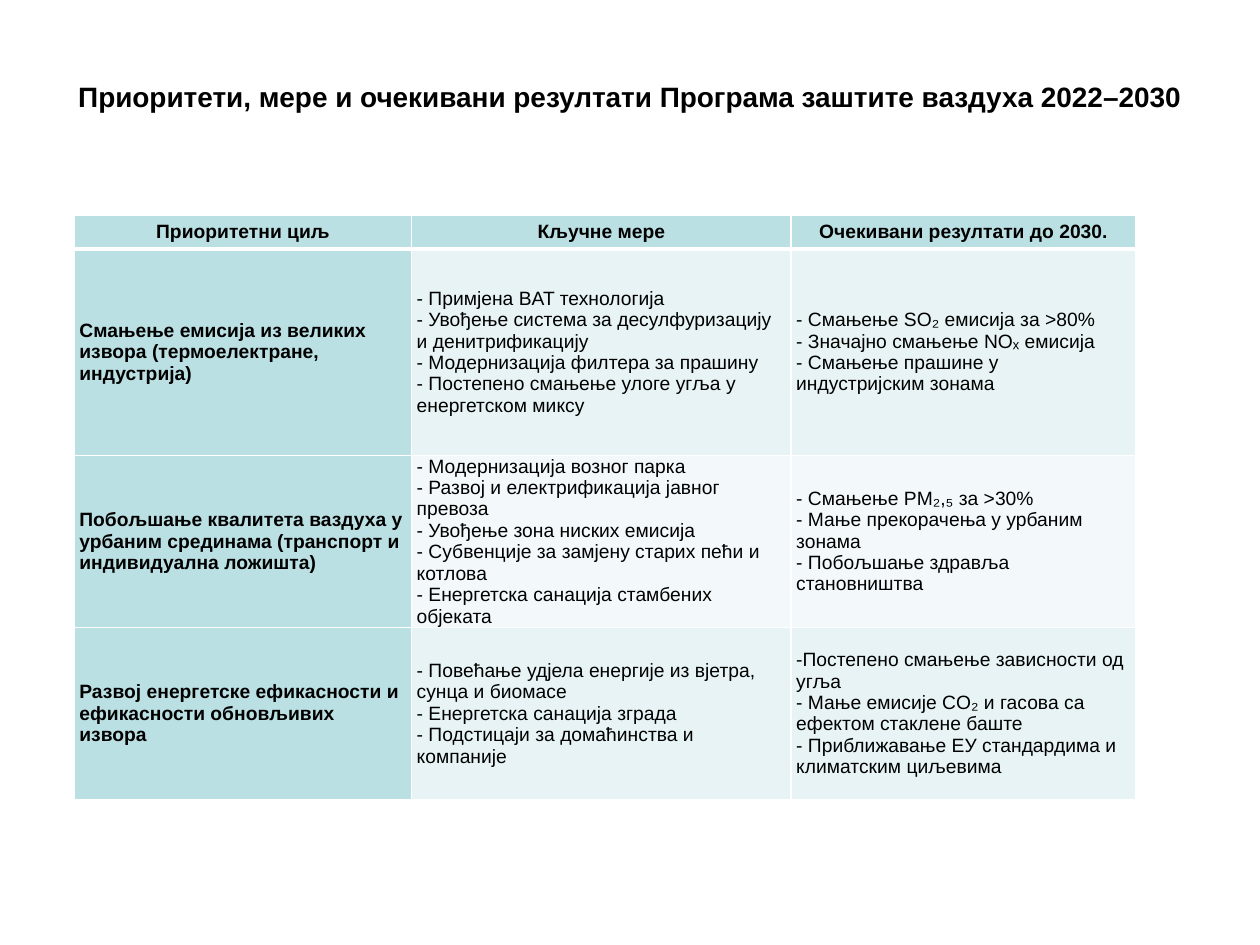
from lxml import etree
from pptx import Presentation
from pptx.dml.color import RGBColor
from pptx.enum import text
from pptx.oxml import ns
from pptx.util import Cm, Pt

BLACK = RGBColor(0x00, 0x00, 0x00)
WHITE = RGBColor(0xFF, 0xFF, 0xFF)
TEAL = RGBColor(0xBB, 0xE0, 0xE3)
BAND_DARK = RGBColor(0xE7, 0xF3, 0xF4)
BAND_LIGHT = RGBColor(0xF3, 0xF9, 0xFA)

TITLE = "Приоритети, мере и очекивани резултати Програма заштите ваздуха 2022–2030"
COLUMN_WIDTHS = [6.8, 7.65, 6.95]
ROW_HEIGHTS = [0.69, 4.16, 3.47, 3.47]
ROWS = [
    [["Приоритетни циљ"], ["Кључне мере"], ["Очекивани резултати до 2030."]],
    [
        ["Смањење емисија из великих извора (термоелектране, индустрија)"],
        [
            "- Примјена BAT технологија",
            "- Увођење система за десулфуризацију и денитрификацију",
            "- Модернизација филтера за прашину",
            "- Постепено смањење улоге угља у енергетском миксу",
        ],
        [
            "- Смањење SO₂ емисија за >80%",
            "- Значајно смањење NOₓ емисија",
            "- Смањење прашине у индустријским зонама",
        ],
    ],
    [
        ["Побољшање квалитета ваздуха у урбаним срединама (транспорт и индивидуална ложишта)"],
        [
            "- Модернизација возног парка",
            "- Развој и електрификација јавног превоза",
            "- Увођење зона ниских емисија",
            "- Субвенције за замјену старих пећи и котлова",
            "- Енергетска санација стамбених објеката",
        ],
        [
            "- Смањење PM₂,₅ за >30%",
            "- Мање прекорачења у урбаним зонама",
            "- Побољшање здравља становништва",
        ],
    ],
    [
        ["Развој енергетске ефикасности и ефикасности обновљивих извора"],
        [
            "- Повећање удjела енергије из вjетра, сунца и биомасе",
            "- Енергетска санација зграда",
            "- Подстицаји за домаћинства и компаније",
        ],
        [
            "-Постепено смањење зависности од угља",
            "- Мање емисије CO₂ и гасова са ефектом стаклене баште",
            "- Приближавање ЕУ стандардима и климатским циљевима",
        ],
    ],
]


def write_paragraph(paragraph, content, size, bold, alignment):
    """Fill a paragraph and format it."""
    paragraph.text = content
    paragraph.alignment = alignment
    font = paragraph.font
    font.name, font.size, font.bold = "Arial", Pt(size), bold
    font.color.rgb = BLACK


def set_borders(cell, widths):
    """Draw white cell borders from a mapping of side to width in points."""
    properties = cell._tc.get_or_add_tcPr()
    for index, (side, width) in enumerate(widths.items()):
        line = etree.Element(ns.qn(f"a:ln{side}"), w=str(Pt(width)))
        fill = etree.SubElement(line, ns.qn("a:solidFill"))
        etree.SubElement(fill, ns.qn("a:srgbClr"), val=str(WHITE))
        properties.insert(index, line)


def format_cell(cell, lines, row, column):
    """Write one table cell with the look of its row and column."""
    header = row == 0
    emphasised = header or column == 0
    alignment = text.PP_ALIGN.CENTER if header else text.PP_ALIGN.LEFT
    write_paragraph(cell.text_frame.paragraphs[0], "\n".join(lines), 11, emphasised, alignment)
    cell.vertical_anchor = text.MSO_ANCHOR.MIDDLE
    cell.margin_left = cell.margin_right = Cm(0.1)
    cell.margin_top = cell.margin_bottom = 0
    band = BAND_DARK if row % 2 else BAND_LIGHT
    cell.fill.solid()
    cell.fill.fore_color.rgb = TEAL if emphasised else band
    set_borders(cell, {"L": 1, "R": 1, "T": 3 if row == 1 else 1, "B": 3 if header else 1})


def add_title(slide):
    """Place and format the slide title."""
    title = slide.shapes.title
    title.left, title.top, title.width, title.height = Cm(1.3), Cm(1.12), Cm(22.8), Cm(1.63)
    frame = title.text_frame
    frame.auto_size = text.MSO_AUTO_SIZE.NONE
    frame.vertical_anchor = text.MSO_ANCHOR.MIDDLE
    write_paragraph(frame.paragraphs[0], TITLE, 16, True, text.PP_ALIGN.CENTER)


def add_measures_table(slide):
    """Add the table of priorities, measures and expected results."""
    table = slide.shapes.add_table(
        len(ROW_HEIGHTS), len(COLUMN_WIDTHS), Cm(1.5), Cm(4.33),
        Cm(sum(COLUMN_WIDTHS)), Cm(sum(ROW_HEIGHTS)),
    ).table
    table.first_col = True
    for column, width in zip(table.columns, COLUMN_WIDTHS):
        column.width = Cm(width)
    for row, height in zip(table.rows, ROW_HEIGHTS):
        row.height = Cm(height)
    for row, contents in enumerate(ROWS):
        for column, lines in enumerate(contents):
            format_cell(table.cell(row, column), lines, row, column)


def main():
    """Build and save the presentation."""
    presentation = Presentation()
    presentation.slide_width, presentation.slide_height = Cm(25.4), Cm(19.05)
    slide = presentation.slides.add_slide(presentation.slide_layouts[5])
    add_measures_table(slide)
    add_title(slide)
    presentation.save("out.pptx")


if __name__ == "__main__":
    main()
